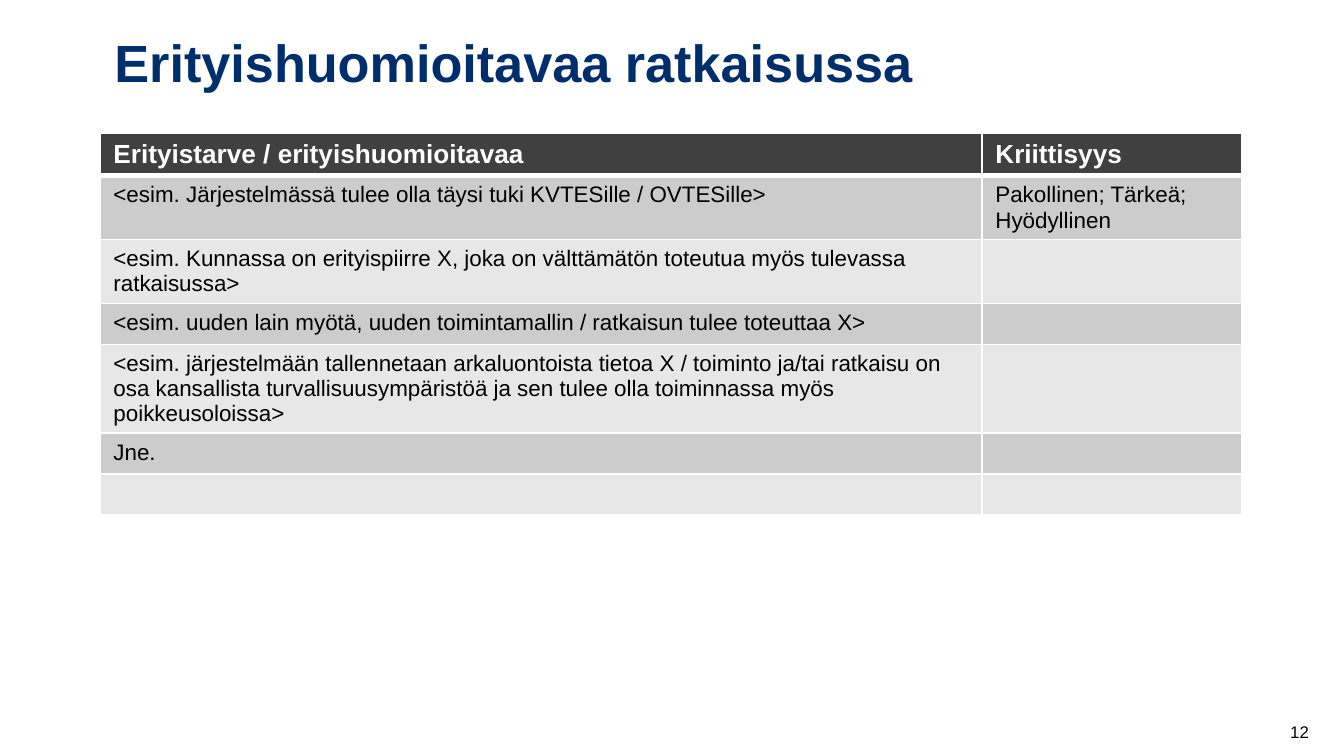
from lxml.etree import SubElement
from pptx import Presentation
from pptx.dml.color import RGBColor
from pptx.enum.text import MSO_ANCHOR as Anchor, PP_ALIGN as Align
from pptx.oxml.ns import qn
from pptx.util import Emu, Pt

PX = 914400 / 134.4
FONT = "Arial"
WHITE, BLACK, NAVY = "FFFFFF", "000000", "002E6C"
HEADER_FILL, BAND_FILLS = "404040", ("CCCCCC", "E7E7E7")

COLUMN_WIDTHS = (882, 260)
ROW_HEIGHTS = (42, 63, 64, 39, 88, 39, 38)
ROWS = (
    ("Erityistarve / erityishuomioitavaa", "Kriittisyys"),
    ("<esim. Järjestelmässä tulee olla täysi tuki KVTESille / OVTESille>",
     "Pakollinen; Tärkeä; Hyödyllinen"),
    ("<esim. Kunnassa on erityispiirre X, joka on välttämätön toteutua "
     "myös tulevassa ratkaisussa>", ""),
    ("<esim. uuden lain myötä, uuden toimintamallin / ratkaisun tulee "
     "toteuttaa X>", ""),
    ("<esim. järjestelmään tallennetaan arkaluontoista tietoa X / toiminto "
     "ja/tai ratkaisu on osa kansallista turvallisuusympäristöä ja sen tulee "
     "olla toiminnassa myös poikkeusoloissa>", ""),
    ("Jne.", ""),
    ("", ""),
)


def px(n):
    return Emu(round(n * PX))


def rgb(color):
    return RGBColor.from_string(color)


def add_run(p, text, size, color, bold=False):
    r = p.add_run()
    r.text = text
    r.font.name = FONT
    r.font.size = Pt(size)
    r.font.bold = bold
    r.font.color.rgb = rgb(color)


def set_borders(cell, bottom):
    """Draw white lines round a cell, with its own bottom width in points."""
    tc_pr = cell._tc.get_or_add_tcPr()
    sides = (("lnL", 1), ("lnR", 1), ("lnT", 1), ("lnB", bottom))
    for i, (side, width) in enumerate(sides):
        ln = SubElement(tc_pr, qn(f"a:{side}"), w=str(Pt(width)))
        fill = SubElement(ln, qn("a:solidFill"))
        SubElement(fill, qn("a:srgbClr"), val=WHITE)
        tc_pr.insert(i, ln)  # borders come before the fill


def fill_cell(cell, text, header, fill):
    cell.fill.solid()
    cell.fill.fore_color.rgb = rgb(fill)
    set_borders(cell, 3 if header else 1)
    p = cell.text_frame.paragraphs[0]
    if text:
        add_run(p, text, 14 if header else 12, WHITE if header else BLACK, header)
    else:
        # An empty cell keeps the body size, so that its row stays low
        SubElement(p._p, qn("a:endParaRPr"), sz="1200")


def add_needs_table(s):
    frame = s.shapes.add_table(len(ROWS), len(COLUMN_WIDTHS), px(100), px(133),
                               px(sum(COLUMN_WIDTHS)), px(sum(ROW_HEIGHTS)))
    table = frame.table
    for column, width in zip(table.columns, COLUMN_WIDTHS):
        column.width = px(width)
    for i, (row, height, texts) in enumerate(zip(table.rows, ROW_HEIGHTS, ROWS)):
        row.height = px(height)
        fill = BAND_FILLS[(i - 1) % 2] if i else HEADER_FILL
        for cell, text in zip(row.cells, texts):
            fill_cell(cell, text, i == 0, fill)


def add_page_number(s, text):
    sp = s.shapes.add_textbox(px(1277), px(712), px(60), px(40))
    tf = sp.text_frame
    tf.word_wrap = True
    tf.vertical_anchor = Anchor.MIDDLE
    add_run(tf.paragraphs[0], text, 9, BLACK)


def set_title(s, text):
    sp = s.shapes.title
    sp.left, sp.top, sp.width, sp.height = px(101), px(17), px(1142), px(100)
    tf = sp.text_frame
    tf.vertical_anchor = Anchor.TOP
    tf.margin_top = px(13)
    p = tf.paragraphs[0]
    p.alignment = Align.LEFT
    add_run(p, text, 28, NAVY, True)


def main():
    prs = Presentation()
    prs.slide_width, prs.slide_height = px(1344), px(756)
    s = prs.slides.add_slide(prs.slide_layouts[5])

    # Heading
    set_title(s, "Erityishuomioitavaa ratkaisussa")
    # Special needs and how critical they are
    add_needs_table(s)
    # Footer
    add_page_number(s, "12")

    prs.save("out.pptx")


if __name__ == "__main__":
    main()
